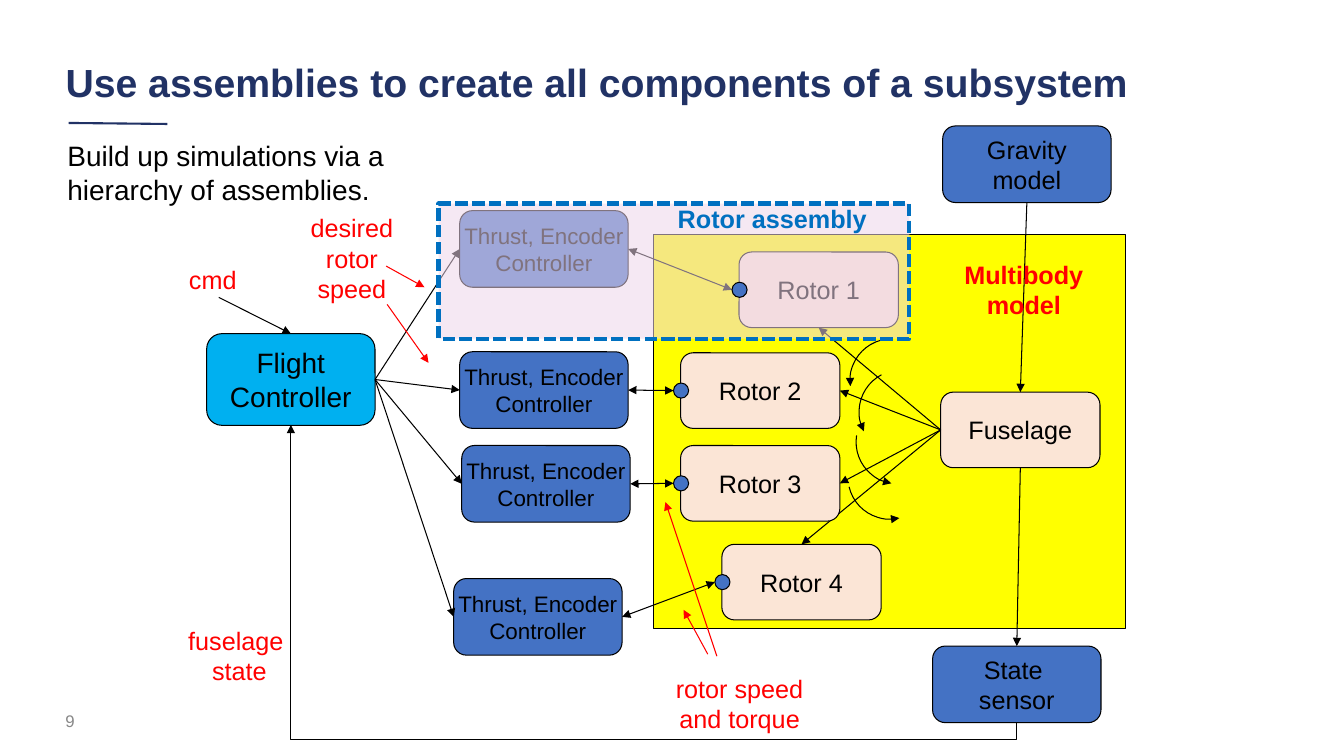
from collections import namedtuple

from lxml.etree import SubElement
from pptx import Presentation
from pptx.dml.color import RGBColor
from pptx.enum.dml import MSO_LINE
from pptx.enum.shapes import MSO_CONNECTOR, MSO_SHAPE
from pptx.enum.text import MSO_ANCHOR, PP_ALIGN
from pptx.oxml.ns import qn
from pptx.util import Inches, Pt

Box = namedtuple("Box", "left top width height")
BLACK, RED, BLUE, PEACH, NAVY = "000000", "FF0000", "4472C4", "FBE5D6", "213265"
TOP, LEFT, BOTTOM, RIGHT = range(4)
BLOCK = (1.67, 0.76)
BODY = (1.58, 0.75)
DOT = 0.15


def color(value):
    return RGBColor.from_string(value)


def within(box, left, top, width, height):
    return Box(box.left + left, box.top + top, width, height)


def lengths(box):
    return [Inches(value) for value in box]


def write(shape, text, size, fill=BLACK, bold=False, align=PP_ALIGN.CENTER,
          anchor=MSO_ANCHOR.TOP, wrap=False):
    frame = shape.text_frame
    frame.text = text
    frame_format = {"word_wrap": wrap, "vertical_anchor": anchor}
    for name, value in frame_format.items():
        setattr(frame, name, value)
    font_format = {"name": "Arial", "size": Pt(size), "bold": bold}
    for paragraph in frame.paragraphs:
        paragraph.alignment = align
        for name, value in font_format.items():
            setattr(paragraph.font, name, value)
        paragraph.font.color.rgb = color(fill)


def add_label(slide, box, text, size=18, fill=RED, **options):
    write(slide.shapes.add_textbox(*lengths(box)), text, size, fill, **options)


def add_shape(slide, kind, box, fill=None, line=BLACK, weight=0.75):
    shape = slide.shapes.add_shape(kind, *lengths(box))
    shape.shadow.inherit = False
    if fill:
        shape.fill.solid()
        shape.fill.fore_color.rgb = color(fill)
    else:
        shape.fill.background()
    shape.line.color.rgb = color(line)
    shape.line.width = Pt(weight)
    return shape


def add_block(slide, box, text, fill=BLUE, size=18):
    shape = add_shape(slide, MSO_SHAPE.ROUNDED_RECTANGLE, box, fill)
    write(shape, text, size, anchor=MSO_ANCHOR.MIDDLE)
    return shape


def add_arrowheads(shape, ends):
    line = shape.line._get_or_add_ln()
    for end in ends:
        SubElement(line, qn(f"a:{end}End"), type="triangle")


def add_line(slide, start=(0, 0), finish=(0, 0), begin=None, end=None, line=BLACK,
             weight=0.75, ends=("tail",), kind=MSO_CONNECTOR.STRAIGHT):
    connector = slide.shapes.add_connector(kind, *lengths((*start, *finish)))
    if begin:
        connector.begin_connect(*begin)
    if end:
        connector.end_connect(*end)
    connector.line.color.rgb = color(line)
    connector.line.width = Pt(weight)
    add_arrowheads(connector, ends)
    SubElement(connector._element.spPr, qn("a:effectLst"))
    return connector


def draw_header(slide, box):
    title = slide.shapes.title
    for name, value in zip(Box._fields, lengths(box)):
        setattr(title, name, value)
    write(title, "Use assemblies to create all components of a subsystem", 28, NAVY,
          bold=True, align=PP_ALIGN.LEFT, anchor=MSO_ANCHOR.MIDDLE, wrap=True)
    title.text_frame.paragraphs[0].line_spacing = 0.9
    add_line(slide, (box.left + 0.13, box.top + 0.76), (box.left + 1.11, box.top + 0.77),
             line=NAVY, weight=1.5, ends=())
    add_label(slide, within(box, 0.02, 0.87, 3.4, 0.77),
              "Build up simulations via a hierarchy of assemblies.", 20, BLACK,
              align=PP_ALIGN.LEFT, wrap=True)
    add_label(slide, within(box, 0, 6.49, 3, 0.4), "9", 12, "888888",
              align=PP_ALIGN.LEFT, anchor=MSO_ANCHOR.MIDDLE, wrap=True)


def draw_multibody(slide, box):
    add_shape(slide, MSO_SHAPE.RECTANGLE, box, "FFFF00")
    fuselage = add_block(slide, within(box, 2.85, 1.56, *BODY), "Fuselage", PEACH)
    rotors = {}
    for number, left, top, side, arc_left, arc_top, angle in (
        (1, 0.85, 0.17, BOTTOM, 1.95, 1.03, 262.3),
        (2, 0.27, 1.17, RIGHT, 2.04, 1.34, 242.3),
        (4, 0.68, 3.07, TOP, 2.01, 1.64, 189),
        (3, 0.27, 2.09, RIGHT, 1.93, 1.99, 166.9),
    ):
        place = within(box, left, top, *BODY)
        rotor = add_block(slide, place, f"Rotor {number}", PEACH)
        add_line(slide, begin=(fuselage, LEFT), end=(rotor, side))
        arc = add_shape(slide, MSO_SHAPE.ARC, within(box, arc_left, arc_top, 0.83, 0.83))
        arc.rotation = angle
        add_arrowheads(arc, ["head"])
        rotors[number] = place
    return fuselage, rotors


def draw_controllers(slide, box, rotors):
    flight = add_block(slide, within(box, 0, 1.22, 1.67, 0.91), "Flight\nController",
                       "00B0F0", 20)
    places = ((2.51, 0), (2.51, 1.4), (2.53, 2.33), (2.45, 3.65))
    for number, place in enumerate(places, 1):
        controller = add_block(slide, within(box, *place, *BLOCK),
                               "Thrust, Encoder\nController", size=16)
        rotor = rotors[number]
        add_line(slide, finish=(rotor.left - 0.07, rotor.top + rotor.height / 2),
                 begin=(controller, RIGHT), ends=("head", "tail"))
        add_line(slide, begin=(flight, RIGHT), end=(controller, LEFT))
    return flight


def draw_environment(slide, box, flight, fuselage):
    state = add_block(slide, within(box, 0, 5.16, *BLOCK), "State \nsensor")
    gravity = add_block(slide, within(box, 0.1, 0, *BLOCK), "Gravity\nmodel")
    add_line(slide, begin=(fuselage, BOTTOM), end=(state, TOP))
    add_line(slide, begin=(gravity, BOTTOM), end=(fuselage, TOP))
    feedback = add_line(slide, begin=(flight, BOTTOM), end=(state, BOTTOM),
                        ends=("head",), kind=MSO_CONNECTOR.ELBOW)
    turned = within(box, -4.24, 0.84, 2.95, 7.2)
    for name, value in zip(Box._fields, lengths(turned)):
        setattr(feedback, name, value)
    properties = feedback._element.spPr
    transform = properties.find(qn("a:xfrm"))
    for name, value in {"rot": "16200000", "flipH": "1", "flipV": "0"}.items():
        transform.set(name, value)
    adjustments = properties.find(qn("a:prstGeom")).find(qn("a:avLst"))
    SubElement(adjustments, qn("a:gd"), name="adj1", fmla="val 105700")


def draw_annotations(slide, box, flight):
    for text, place, options in (
        ("Multibody\nmodel", (7.7, 0.55, 1.39, 0.71), {"bold": True}),
        ("fuselage\n state", (0, 4.18, 1.16, 0.71), {}),
        ("desired rotor speed", (1.13, 0.09, 1.2, 1.01), {"wrap": True}),
        ("rotor speed and torque", (4.62, 4.66, 1.91, 0.71), {"wrap": True}),
        ("cmd", (0.01, 0.6, 0.68, 0.4), {}),
    ):
        add_label(slide, within(box, *place), text, **options)
    for left, top, right, bottom in (
        (5.26, 4.52, 5.02, 4.08),
        (5.35, 4.54, 4.84, 3.01),
        (2.08, 1.05, 2.49, 1.63),
        (2.07, 0.67, 2.45, 0.88),
    ):
        add_line(slide, (box.left + left, box.top + top),
                 (box.left + right, box.top + bottom), line=RED)
    add_line(slide, (box.left + 0.41, box.top + 0.98), end=(flight, TOP))


def draw_rotor_assembly(slide, box, rotors):
    overlay = add_shape(slide, MSO_SHAPE.RECTANGLE, box, "EDD5EA", "0070C0", 3)
    overlay.line.dash_style = MSO_LINE.SQUARE_DOT
    tint = overlay._element.spPr.find(qn("a:solidFill"))[0]
    SubElement(tint, qn("a:alpha"), val="54000")
    add_label(slide, within(box, 2.26, -0.05, 2.1, 0.4), "Rotor assembly",
              fill="0070C0", bold=True)
    for rotor in rotors.values():
        add_shape(slide, MSO_SHAPE.OVAL, within(rotor, -0.07, 0.3, DOT, DOT), BLUE)


def main():
    presentation = Presentation()
    presentation.slide_width = Inches(13.33)
    presentation.slide_height = Inches(7.5)
    slide = presentation.slides.add_slide(presentation.slide_layouts[5])
    draw_header(slide, Box(0.55, 0.46, 11.12, 0.76))
    fuselage, rotors = draw_multibody(slide, Box(6.48, 2.33, 4.68, 3.91))
    flight = draw_controllers(slide, Box(2.05, 2.09, 4.2, 4.41), rotors)
    draw_environment(slide, Box(9.25, 1.25, 1.77, 5.92), flight, fuselage)
    draw_annotations(slide, Box(1.76, 1.97, 9.09, 5.37), flight)
    draw_rotor_assembly(slide, Box(4.35, 2.02, 4.67, 1.34), rotors)
    presentation.save("out.pptx")


if __name__ == "__main__":
    main()
